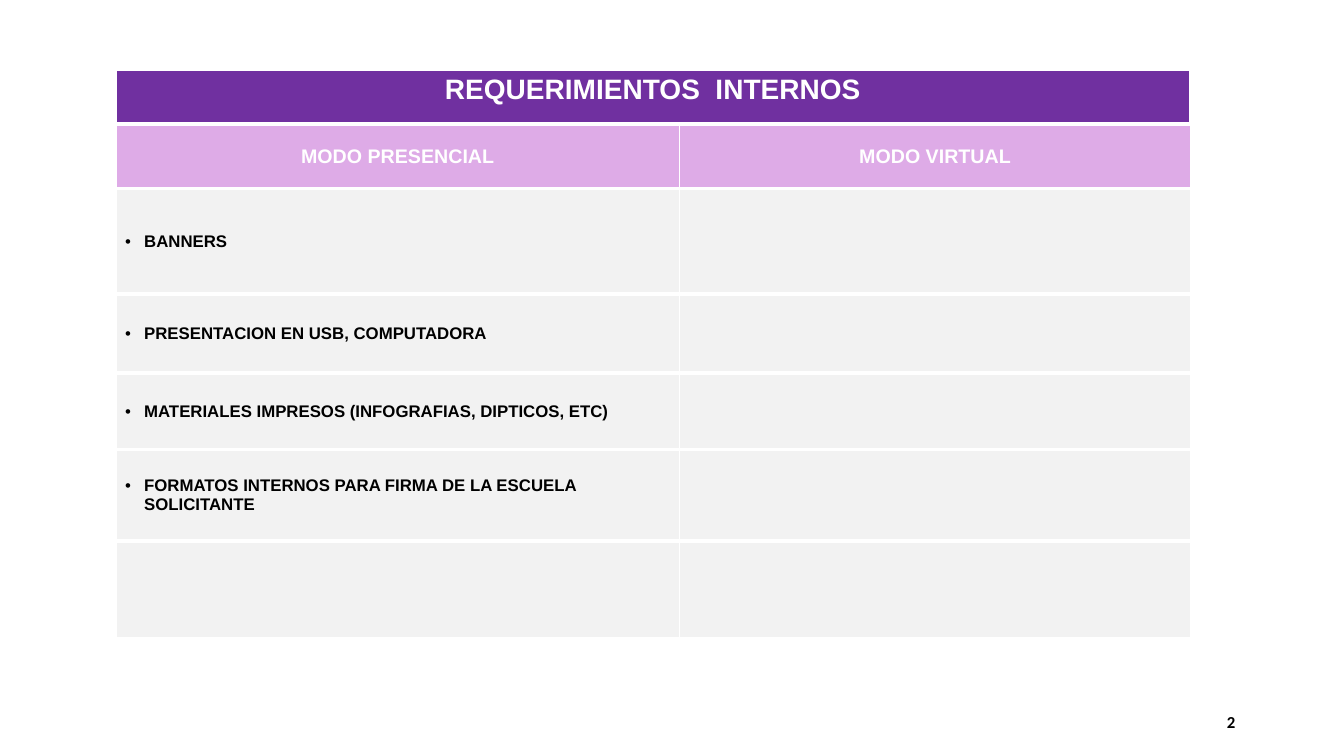
from lxml.etree import SubElement
from pptx import Presentation
from pptx.dml.color import RGBColor
from pptx.enum.text import MSO_ANCHOR, PP_ALIGN
from pptx.oxml.ns import qn
from pptx.util import Pt

PX = 9144
WHITE = RGBColor(0xFF, 0xFF, 0xFF)
BLACK = RGBColor(0x00, 0x00, 0x00)
PURPLE = RGBColor(0x70, 0x30, 0xA0)
LILAC = RGBColor(0xDE, 0xAB, 0xE7)
GRAY = RGBColor(0xF2, 0xF2, 0xF2)

TABLE_LEFT = 115
TITLE_TOP = 70
TITLE_HEIGHT = 53
COLUMN_WIDTHS = [559, 507]
ROW_HEIGHTS = [64, 105, 78, 76, 91, 97]
HEADINGS = ["MODO PRESENCIAL", "MODO VIRTUAL"]
REQUIREMENTS = [
    "BANNERS",
    "PRESENTACION EN USB, COMPUTADORA",
    "MATERIALES IMPRESOS (INFOGRAFIAS, DIPTICOS, ETC)",
    "FORMATOS INTERNOS PARA FIRMA DE LA ESCUELA SOLICITANTE",
]


def add_table(slide, top, widths, heights):
    frame = slide.shapes.add_table(
        len(heights), len(widths), TABLE_LEFT * PX, top * PX,
        sum(widths) * PX, sum(heights) * PX)
    table = frame.table
    for column, width in zip(table.columns, widths):
        column.width = width * PX
    for row, height in zip(table.rows, heights):
        row.height = height * PX
    return table


def style_cell(cell, fill, top_border, text="", size=12, color=BLACK):
    properties = cell._tc.get_or_add_tcPr()
    for side, points in (("L", 1), ("R", 1), ("T", top_border), ("B", 3)):
        line = SubElement(properties, qn(f"a:ln{side}"), w=str(Pt(points)))
        SubElement(SubElement(line, qn("a:solidFill")), qn("a:srgbClr"), val=str(WHITE))
    cell.fill.solid()
    cell.fill.fore_color.rgb = fill
    cell.margin_left = cell.margin_right = 9 * PX
    cell.margin_top = cell.margin_bottom = 4 * PX
    cell.vertical_anchor = MSO_ANCHOR.MIDDLE
    paragraph = cell.text_frame.paragraphs[0]
    if text:
        run = paragraph.add_run()
        run.text = text
        run.font.name = "Arial"
        run.font.size = Pt(size)
        run.font.bold = True
        run.font.color.rgb = color
    return paragraph


presentation = Presentation()
presentation.slide_width = 1333 * PX
presentation.slide_height = 750 * PX
slide = presentation.slides.add_slide(presentation.slide_layouts[6])

requirements_table = add_table(slide, TITLE_TOP + TITLE_HEIGHT, COLUMN_WIDTHS, ROW_HEIGHTS)
for column, heading in enumerate(HEADINGS):
    paragraph = style_cell(requirements_table.cell(0, column), LILAC, 1, heading, 14, WHITE)
    paragraph.alignment = PP_ALIGN.CENTER
    paragraph.line_spacing = 1.07
    for row in range(1, len(ROW_HEIGHTS)):
        has_text = column == 0 and row <= len(REQUIREMENTS)
        text = REQUIREMENTS[row - 1] if has_text else ""
        paragraph = style_cell(requirements_table.cell(row, column), GRAY, 3, text)
        if has_text:
            bullet = paragraph._p.get_or_add_pPr()
            bullet.set("marL", str(19 * PX))
            bullet.set("indent", str(-19 * PX))
            SubElement(bullet, qn("a:buFont"), typeface="Arial")
            SubElement(bullet, qn("a:buChar"), char="•")

title_table = add_table(slide, TITLE_TOP, [1065], [TITLE_HEIGHT])
title_cell = title_table.cell(0, 0)
paragraph = style_cell(title_cell, PURPLE, 1, "REQUERIMIENTOS  INTERNOS", 20, WHITE)
paragraph.alignment = PP_ALIGN.CENTER
title_cell.vertical_anchor = MSO_ANCHOR.TOP

page_number = slide.shapes.add_textbox(1207 * PX, 701 * PX, 41 * PX, 30 * PX)
page_number.text_frame.word_wrap = True
run = page_number.text_frame.paragraphs[0].add_run()
run.text = "2"
run.font.name = "Calibri"
run.font.size = Pt(12)
run.font.bold = True
run.font.color.rgb = BLACK

presentation.save("out.pptx")
